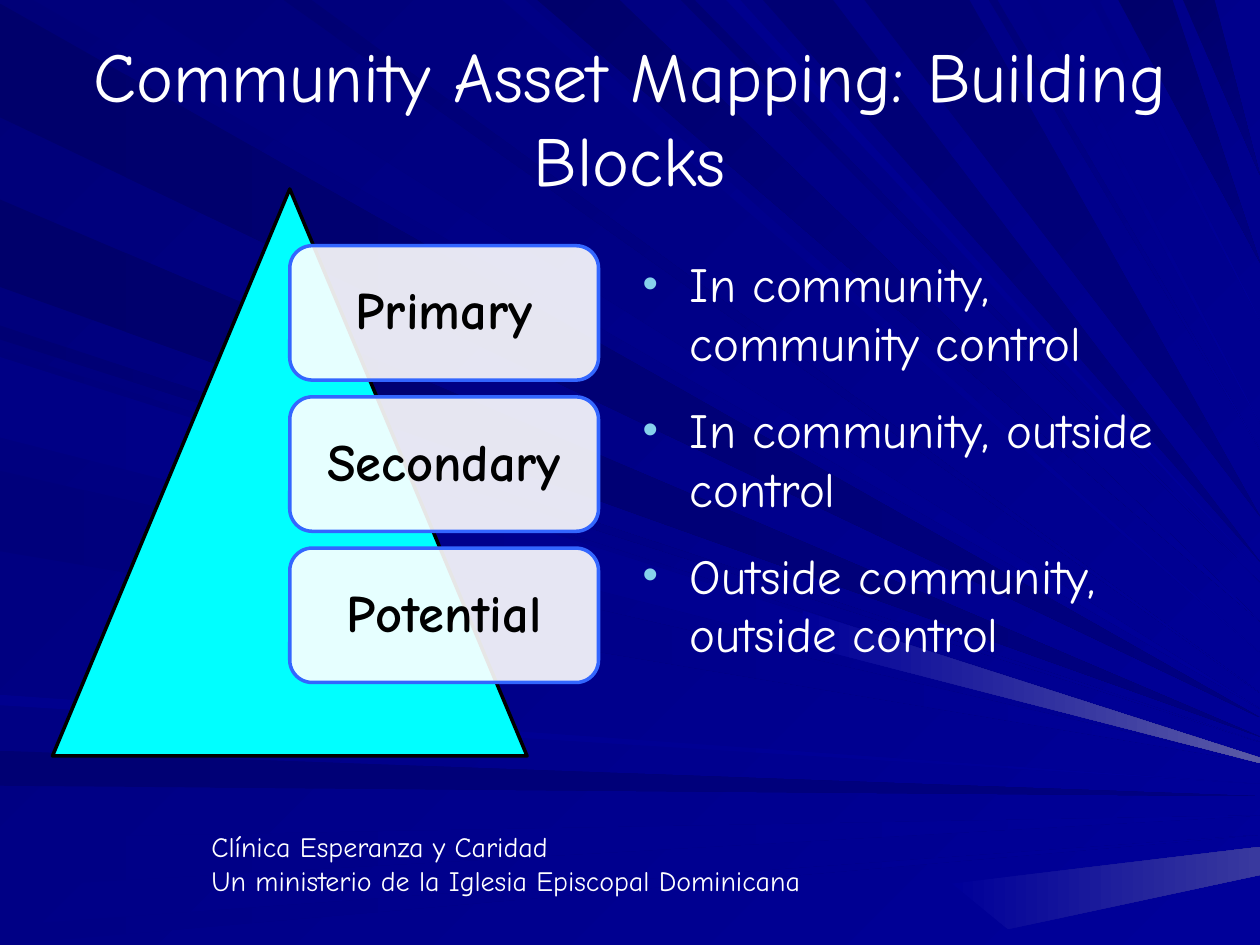
from pptx import Presentation
from pptx.dml.color import RGBColor as RGB
from pptx.enum.shapes import MSO_SHAPE as SHAPE
from pptx.enum.text import MSO_ANCHOR as ANCHOR, MSO_AUTO_SIZE as AUTO, PP_ALIGN as ALIGN
from pptx.oxml.ns import qn
from pptx.util import Pt
from lxml.etree import SubElement

FACE = "Comic Neue"
COL = {"white": "FFFFFF", "black": "000000", "cyan": "00FFFF", "edge": "3366FF",
       "dot": "86D1EC", "haze": "5A5AA6", "mist": "39399E", "base": "000078",
       "ink": "00006B", "dusk": "000073", "deep": "00007B", "navy": "000080",
       "mid": "000085", "soft": "00008E", "blue": "000099"}


def paint(fill, first, last, angle=0):
    if first == last:
        fill.solid()
        fill.fore_color.rgb = RGB.from_string(COL[first])
        return
    fill.gradient()
    fill.gradient_angle = (360 - angle) % 360
    for stop, key in zip(fill.gradient_stops, (first, last)):
        stop.color.rgb = RGB.from_string(COL[key])


def style(font, size, key="white", bold=False):
    font.name, font.size, font.bold = FACE, Pt(size), bold
    font.color.rgb = RGB.from_string(COL[key])


deck = Presentation()
deck.slide_width, deck.slide_height = Pt(720), Pt(540)
slide = deck.slides.add_slide(deck.slide_layouts[1])
shapes = slide.shapes
paint(slide.background.fill, "base", "blue", 45)

# Rays run from a span on the left or top edge to a tip on the right edge
LEFT = [(2, 67, 410, "ink", "navy"), (429, 449, 455, "dusk", "navy"),
        (479, 507, 466, "mid", "blue"), (529, 540, 477, "mid", "blue"),
        (186, 194, 424, "dusk", "blue"), (114, 164, 421, "ink", "navy"),
        (200, 246, 433, "deep", "blue"), (269, 315, 436, "deep", "blue"),
        (397, 403, 448, "soft", "blue"), (204, 250, 434, "mid", "blue")]
TOP = [(19, 73, 405, "deep", "blue"), (287, 300, 373, "mid", "blue"),
       (307, 354, 355, "ink", "blue"), (389, 397, 333, "dusk", "blue"),
       (436, 476, 321, "dusk", "navy"), (162, 178, 396, "dusk", "blue"),
       (415, 423, 327, "soft", "blue"), (494, 554, 295, "dusk", "navy"),
       (565, 570, 257, "base", "blue"), (587, 593, 242, "mid", "blue"),
       (623, 628, 183, "mid", "blue"), (639, 670, 150, "ink", "navy"),
       (676, 694, 100, "ink", "navy")]
rays = [([(0, a), (720, tip), (0, b)], *hues, 0) for a, b, tip, *hues in LEFT]
rays += [([(a, 0), (720, tip), (b, 0)], *hues, 45) for a, b, tip, *hues in TOP]

# Pale ends on the right
rays += [([(459, 349), (720, 433), (720, 436), (456, 368)], "blue", "haze", 0),
         ([(544, 505), (720, 484), (720, 500), (576, 531)], "blue", "mist", 0)]
for dots, first, last, angle in rays:
    pen = shapes.build_freeform(*dots[0], scale=Pt(1))
    pen.add_line_segments(dots[1:], close=True)
    ray = pen.convert_to_shape()
    ray.shadow.inherit = False
    ray.line.fill.background()
    paint(ray.fill, first, last, angle)

# Title and list, brought in front of the rays
title, body = shapes.title, slide.placeholders[1]
for box, area in ((title, (36, 21.6, 648, 90)), (body, (360, 141.4, 318.24, 296.4))):
    shapes._spTree.append(box._element)
    box.left, box.top, box.width, box.height = map(Pt, area)
    box.text_frame.word_wrap = True
    box.text_frame.auto_size = AUTO.NONE

title.text_frame.text = "Community Asset Mapping: Building Blocks"
title.text_frame.vertical_anchor = ANCHOR.MIDDLE
head = title.text_frame.paragraphs[0]
head.alignment = ALIGN.CENTER
style(head.font, 40)

body.text_frame.text = "\n".join((
    "In community, community control",
    "In community, outside control",
    "Outside community, outside control"))
for para in body.text_frame.paragraphs:
    para.space_before, para.space_after = Pt(0), Pt(16)
    props = para._p.get_or_add_pPr()
    props.set("marL", str(Pt(27)))
    props.set("indent", str(-Pt(27)))
    tint = SubElement(props, qn("a:buClr"))
    SubElement(tint, qn("a:srgbClr"), val=COL["dot"])
    SubElement(props, qn("a:buSzPct"), val="90000")
    SubElement(props, qn("a:buFont"), typeface="Arial")
    SubElement(props, qn("a:buChar"), char="•")
    style(para.font, 28)

# Footer
foot = shapes.add_textbox(Pt(113.76), Pt(468), Pt(545.76), Pt(48)).text_frame
foot.word_wrap = True
foot.vertical_anchor = ANCHOR.BOTTOM
foot.text = "Clínica Esperanza y Caridad\nUn ministerio de la Iglesia Episcopal Dominicana"
for para in foot.paragraphs:
    style(para.font, 16)

# Pyramid
peak = shapes.add_shape(SHAPE.ISOSCELES_TRIANGLE, Pt(30), Pt(108), Pt(271.2), Pt(324))
peak.shadow.inherit = False
paint(peak.fill, "cyan", "cyan")
peak.line.color.rgb = RGB.from_string(COL["black"])
peak.line.width = Pt(2)

# Building blocks
for row, name in enumerate(("Primary", "Secondary", "Potential")):
    block = shapes.add_shape(SHAPE.ROUNDED_RECTANGLE, Pt(165.6), Pt(140.4 + 86.4 * row),
                             Pt(176.4), Pt(76.8))
    block.shadow.inherit = False
    paint(block.fill, "white", "white")
    shade = block._element.spPr.find(qn("a:solidFill"))[0]
    SubElement(shade, qn("a:alpha"), val="90000")
    block.line.color.rgb = RGB.from_string(COL["edge"])
    block.line.width = Pt(2)
    frame = block.text_frame
    frame.text = name
    frame.vertical_anchor = ANCHOR.MIDDLE
    label = frame.paragraphs[0]
    label.alignment = ALIGN.CENTER
    label.line_spacing = 0.9
    style(label.font, 30, "black", True)

deck.save("out.pptx")
